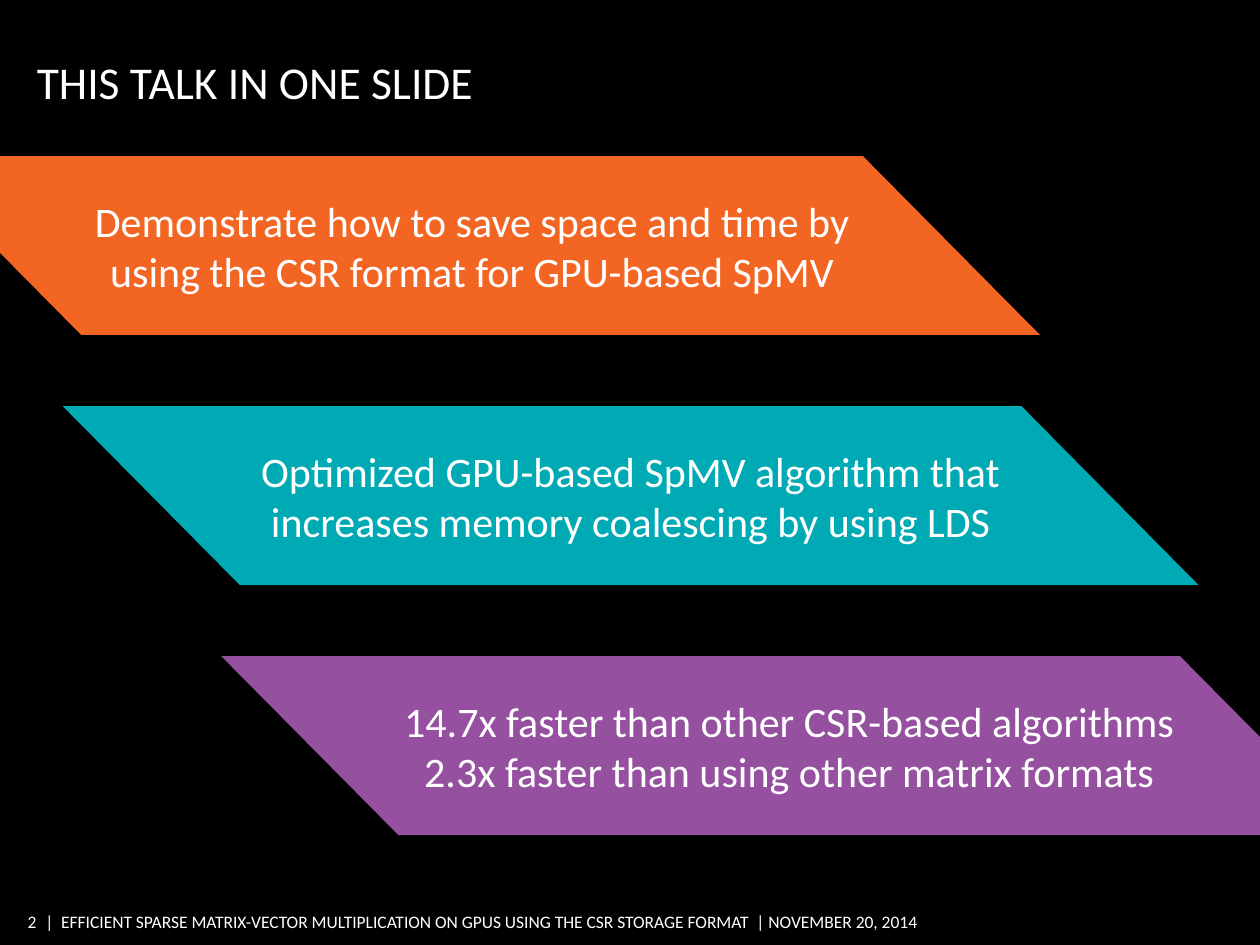
from pptx import Presentation
from pptx.dml.color import RGBColor
from pptx.enum.shapes import MSO_SHAPE as Shape
from pptx.enum.text import MSO_ANCHOR as Anchor, PP_ALIGN as Align
from pptx.oxml.ns import qn
from pptx.util import Pt

WHITE = "FFFFFF"
BANDS = [
    ("F26522", ["Demonstrate how to save space and time by using the CSR format "
                "for GPU-based SpMV"]),
    ("00AAB5", ["Optimized GPU-based SpMV algorithm that",
                "increases memory coalescing by using LDS"]),
    ("9650A0", ["14.7x faster than other CSR-based algorithms",
                "2.3x faster than using other matrix formats"]),
]
FOOTER = ("|  EFFICIENT SPARSE MATRIX-VECTOR MULTIPLICATION ON GPUS USING THE "
          "CSR STORAGE FORMAT  | NOVEMBER 20, 2014")


def color(value):
    """Return the colour for a hex string."""
    return RGBColor.from_string(value)


def write(tf, lines, size, align, anchor):
    """Fill a text frame with white Calibri paragraphs."""
    tf.text = "\n".join(lines)
    tf.vertical_anchor = anchor
    for p in tf.paragraphs:
        p.alignment = align
        p.font.name = "Calibri"
        p.font.size = Pt(size)
        p.font.color.rgb = color(WHITE)


def set_margins(tf, top, bottom):
    """Set vertical text margins and remove the side ones."""
    tf.margin_left = tf.margin_right = 0
    tf.margin_top, tf.margin_bottom = Pt(top), Pt(bottom)


def add_title(s, text, left, top, width, height):
    """Place and format the title placeholder."""
    sp = s.shapes.title
    sp.left, sp.top, sp.width, sp.height = map(Pt, (left, top, width, height))
    set_margins(sp.text_frame, 3.6, 0)
    write(sp.text_frame, [text], 26, Align.LEFT, Anchor.BOTTOM)


def add_band(s, fill, lines, left, top, width, height):
    """Add a slanted band with centred text."""
    sp = s.shapes.add_shape(Shape.PARALLELOGRAM, *map(Pt, (left, top, width, height)))
    sp._element.spPr.find(qn("a:xfrm")).set("flipH", "1")
    sp.adjustments[0] = 0.99
    sp.shadow.inherit = False
    sp.fill.solid()
    sp.fill.fore_color.rgb = color(fill)
    sp.line.fill.background()
    write(sp.text_frame, lines, 24, Align.CENTER, Anchor.MIDDLE)


def add_bands(s, left, top, width, height, step_x, step_y):
    """Stack the bands, each one stepped down and to the right."""
    for i, (fill, lines) in enumerate(BANDS):
        add_band(s, fill, lines, left + i * step_x, top + i * step_y, width, height)


def add_footer(s, left, top, width, height):
    """Add the page number and the talk details on one line."""
    number_width, gap = 11.5, 5
    text_left = left + number_width + gap
    parts = [
        ("2", left, number_width, Align.RIGHT),
        (FOOTER, text_left, left + width - text_left, Align.LEFT),
    ]
    for text, x, w, align in parts:
        tf = s.shapes.add_textbox(*map(Pt, (x, top, w, height))).text_frame
        tf.word_wrap = False
        set_margins(tf, 3, 3)
        write(tf, [text], 10, align, Anchor.MIDDLE)


def main():
    """Build and save the slide."""
    prs = Presentation()
    prs.slide_width, prs.slide_height = Pt(720), Pt(540)
    s = prs.slides.add_slide(prs.slide_layouts[5])
    s.background.fill.solid()
    s.background.fill.fore_color.rgb = color("000000")
    add_footer(s, 9.4, 517, 526.4, 18.7)
    add_title(s, "THIS TALK IN ONE SLIDE", 21, 24.5, 590.4, 37.4)
    add_bands(s, -54.7, 89.2, 649, 102.2, 90.6, 142.9)
    prs.save("out.pptx")


if __name__ == "__main__":
    main()
